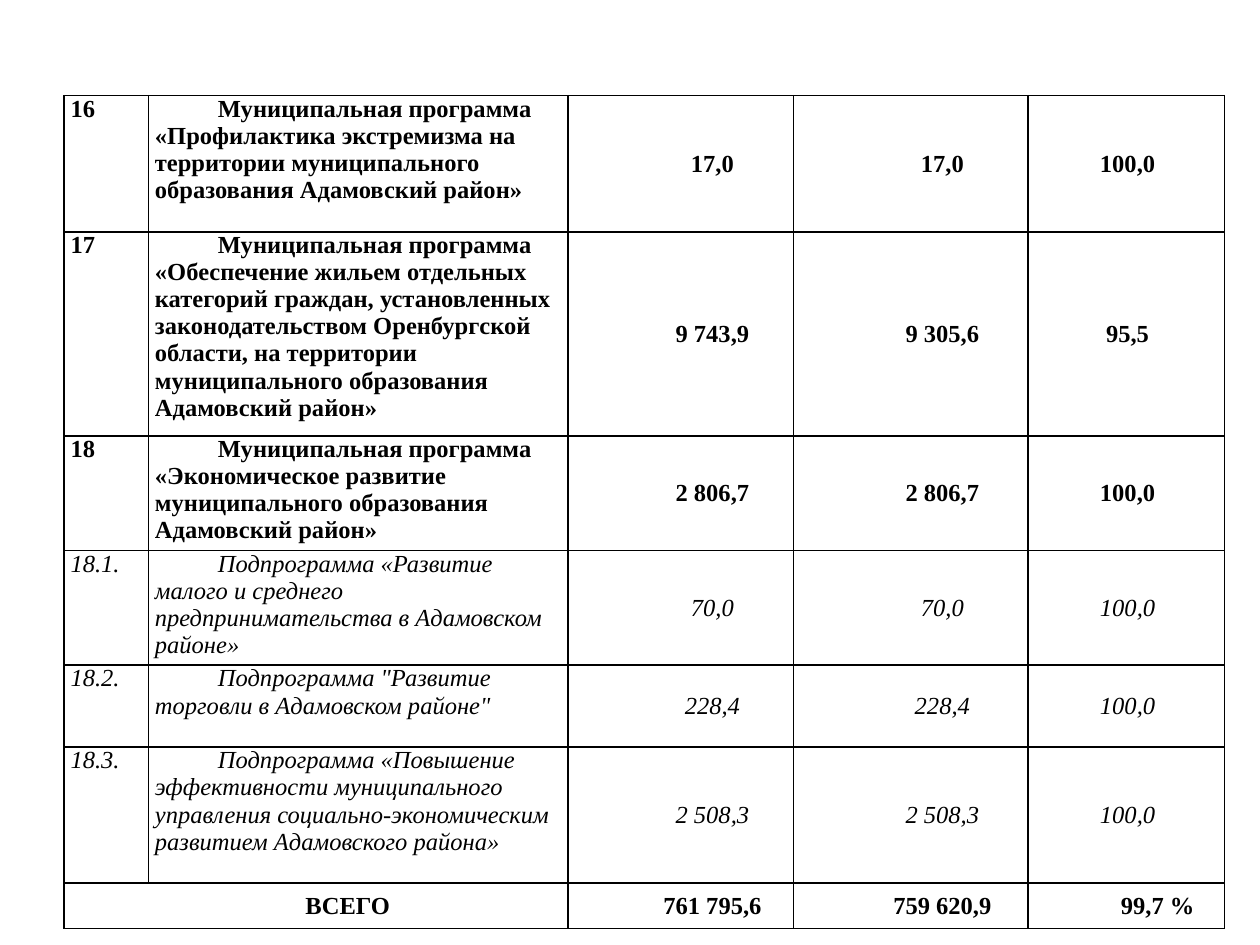
from lxml.etree import fromstring
from pptx import Presentation
from pptx.dml.color import RGBColor
from pptx.enum.text import MSO_ANCHOR, PP_ALIGN
from pptx.oxml.ns import nsdecls
from pptx.util import Pt

COLORS = {"ink": "000000", "paper": "FFFFFF"}
INDENT = 36
PERCENT_INDENT = 1.44
COLUMN_WIDTHS = [48.24, 239.76, 128.88, 133.92, 112.32]
ROW_HEIGHTS = [77.76, 116.64, 65.52, 65.52, 46.8, 77.76, 25.92]
MARGINS = {"margin_left": Pt(3.6), "margin_right": Pt(3.6), "margin_top": Pt(0), "margin_bottom": Pt(0)}
TABLE_FLAGS = {"first_row": False, "horz_banding": False}
PROGRAMS = [
    ("16", "Муниципальная программа «Профилактика экстремизма на территории муниципального образования Адамовский район»",
     "17,0", "17,0", "100,0"),
    ("17", "Муниципальная программа «Обеспечение жильем отдельных категорий граждан, установленных "
     "законодательством Оренбургской области, на территории муниципального образования Адамовский район»",
     "9 743,9", "9 305,6", "95,5"),
    ("18", "Муниципальная программа «Экономическое развитие муниципального образования Адамовский район»",
     "2 806,7", "2 806,7", "100,0"),
    ("18.1.", "Подпрограмма «Развитие малого и среднего предпринимательства в Адамовском районе»",
     "70,0", "70,0", "100,0"),
    ("18.2.", 'Подпрограмма "Развитие торговли в Адамовском районе"',
     "228,4", "228,4", "100,0"),
    ("18.3.", "Подпрограмма «Повышение эффективности муниципального управления социально-экономическим "
     "развитием Адамовского района»",
     "2 508,3", "2 508,3", "100,0"),
    ("ВСЕГО", "", "761 795,6", "759 620,9", "99,7 %"),
]

deck = Presentation()
deck.slide_width, deck.slide_height = Pt(720), Pt(540)
page = deck.slides.add_slide(deck.slide_layouts[6])
frame = page.shapes.add_table(
    len(PROGRAMS), len(COLUMN_WIDTHS), Pt(36.72), Pt(54.72), Pt(sum(COLUMN_WIDTHS)), Pt(sum(ROW_HEIGHTS)))
table = frame.table
for name, value in TABLE_FLAGS.items():
    setattr(table, name, value)
for column, width in zip(table.columns, COLUMN_WIDTHS):
    column.width = Pt(width)
for row, height in zip(table.rows, ROW_HEIGHTS):
    row.height = Pt(height)

total_row = len(PROGRAMS) - 1
table.cell(total_row, 0).merge(table.cell(total_row, 1))

for row_index, program in enumerate(PROGRAMS):
    is_total = row_index == total_row
    is_subprogram = "." in program[0]
    for column_index, text in enumerate(program):
        cell = table.cell(row_index, column_index)
        cell.fill.solid()
        cell.fill.fore_color.rgb = RGBColor.from_string(COLORS["paper"])
        properties = cell._tc.get_or_add_tcPr()
        for position, side in enumerate(["lnL", "lnR", "lnT", "lnB"]):
            border = fromstring(
                f'<a:{side} {nsdecls("a")} w="{Pt(1)}"><a:solidFill>'
                f'<a:srgbClr val="{COLORS["ink"]}"/></a:solidFill></a:{side}>')
            properties.insert(position, border)
        for name, value in MARGINS.items():
            setattr(cell, name, value)
        if cell.is_spanned:
            continue
        centered = is_total or column_index >= 2
        cell.vertical_anchor = MSO_ANCHOR.MIDDLE if centered else MSO_ANCHOR.TOP
        para = cell.text_frame.paragraphs[0]
        para.alignment = PP_ALIGN.CENTER if centered else PP_ALIGN.LEFT
        if is_total or column_index in (1, 2, 3):
            indent = INDENT
        else:
            indent = PERCENT_INDENT if column_index == 4 else 0
        paragraph_properties = para._p.get_or_add_pPr()
        for name, value in {"marL": 0, "indent": Pt(indent)}.items():
            paragraph_properties.set(name, str(value))
        span = para.add_run()
        span.text = text
        font_format = {"name": "Times New Roman", "size": Pt(14), "bold": not is_subprogram, "italic": is_subprogram}
        for name, value in font_format.items():
            setattr(span.font, name, value)
        span.font.color.rgb = RGBColor.from_string(COLORS["ink"])

deck.save("out.pptx")
